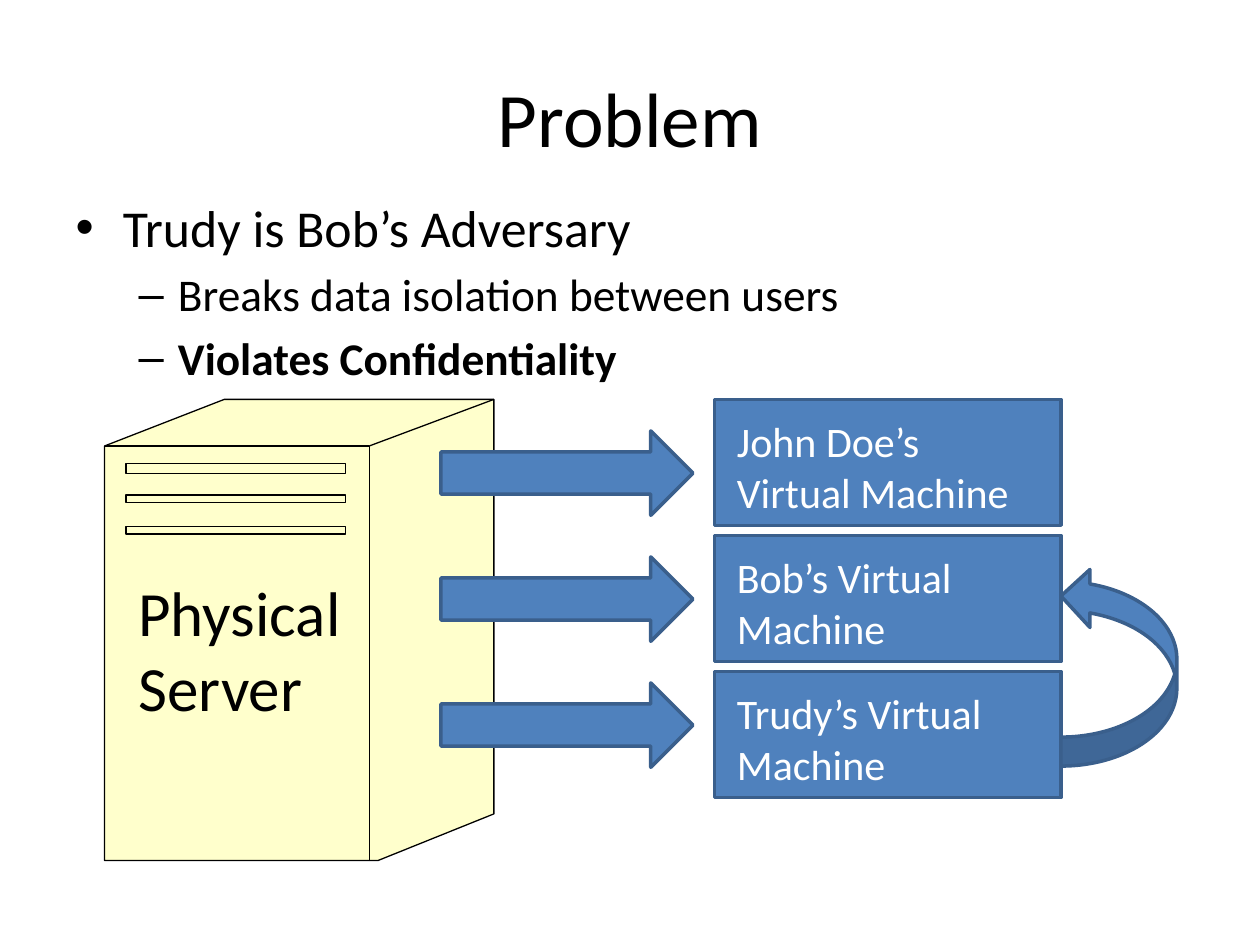
import pptx
import pptx.dml.color
import pptx.enum.shapes
import pptx.enum.text
import pptx.oxml.ns
import pptx.util
from lxml import etree
from pptx.util import Inches

FONT = "Calibri"
BLACK, WHITE = "000000", "FFFFFF"
BLUE, DARK_BLUE, CREAM = "4F81BD", "3A5F8C", "FFFFCC"
SHAPES = pptx.enum.shapes.MSO_SHAPE


def color(hex_string):
    return pptx.dml.color.RGBColor.from_string(hex_string)


def add_text(para, text, size, font_color=BLACK, bold=False):
    span = para.add_run()
    span.text = text
    span.font.name = FONT
    span.font.size = pptx.util.Pt(size)
    span.font.bold = bold
    span.font.color.rgb = color(font_color)


def place(shape, left, top, width, height):
    shape.left, shape.top = Inches(left), Inches(top)
    shape.width, shape.height = Inches(width), Inches(height)


def style(shape, fill, line, line_width):
    shape.shadow.inherit = False
    shape.fill.solid()
    shape.fill.fore_color.rgb = color(fill)
    shape.line.color.rgb = color(line)
    shape.line.width = pptx.util.Pt(line_width)


def add_block(slide, kind, left, top, width, height, fill=BLUE, line=DARK_BLUE, line_width=2):
    block = slide.shapes.add_shape(
        kind, Inches(left), Inches(top), Inches(width), Inches(height))
    style(block, fill, line, line_width)
    return block


def add_label(slide, text, left, top, width, height, size, font_color):
    box = slide.shapes.add_textbox(
        Inches(left), Inches(top), Inches(width), Inches(height))
    box.text_frame.word_wrap = True
    box.text_frame.auto_size = pptx.enum.text.MSO_AUTO_SIZE.SHAPE_TO_FIT_TEXT
    add_text(box.text_frame.paragraphs[0], text, size, font_color)


def add_outline(slide, points, fill, line, line_width):
    """Draw a closed polygon through points given in inches."""
    start, *others = [(Inches(x), Inches(y)) for x, y in points]
    builder = slide.shapes.build_freeform(*start)
    builder.add_line_segments(others, close=True)
    style(builder.convert_to_shape(), fill, line, line_width)


def add_edge(slide, start, end):
    edge = slide.shapes.add_connector(
        pptx.enum.shapes.MSO_CONNECTOR.STRAIGHT,
        Inches(start[0]), Inches(start[1]), Inches(end[0]), Inches(end[1]))
    edge.line.color.rgb = color(BLACK)
    edge.line.width = pptx.util.Pt(0.75)
    etree.SubElement(edge._element.spPr, pptx.oxml.ns.qn("a:effectLst"))


def fill_placeholders(slide):
    title, body = slide.placeholders[0], slide.placeholders[1]
    place(title, 0.5, 0.3, 9, 1.25)
    title.text_frame.vertical_anchor = pptx.enum.text.MSO_ANCHOR.MIDDLE
    add_text(title.text_frame.paragraphs[0], "Problem", 44)

    place(body, 0.5, 1.5, 9.17, 1.42)
    frame = body.text_frame
    frame.auto_size = pptx.enum.text.MSO_AUTO_SIZE.NONE
    add_text(frame.paragraphs[0], "Trudy is Bob’s Adversary", 29.6)
    for text, bold in (("Breaks data isolation between users", False),
                       ("Violates Confidentiality", True)):
        para = frame.add_paragraph()
        para.level = 1
        add_text(para, text, 25.9, bold=bold)


def add_server(slide):
    """Draw the tower: outline, front-face edges and three drive slots."""
    left, corner, right = 0.83, 2.93, 3.92
    top, front_top, bottom = 3.17, 3.54, 6.83
    outline = [(left, front_top), (1.78, top), (right, top),
               (right, 6.46), (3, bottom), (left, bottom)]
    add_outline(slide, outline, CREAM, BLACK, 0.75)

    for end in ((left, front_top), (right, top), (corner, bottom)):
        add_edge(slide, (corner, front_top), end)
    for row, height in enumerate((0.08, 0.06, 0.06)):
        add_block(slide, SHAPES.RECTANGLE, 1, 3.68 + 0.25 * row, 1.74, height,
                  CREAM, BLACK, 0.75)


def add_machines(slide):
    owners = ("John Doe’s", "Bob’s", "Trudy’s")
    for row, owner in enumerate(owners):
        top = 3.17 + 1.08 * row
        add_block(slide, SHAPES.RIGHT_ARROW, 3.5, 3.42 + row, 2, 0.67)
        add_block(slide, SHAPES.RECTANGLE, 5.67, top, 2.75, 1)
        add_label(slide, f"{owner} Virtual Machine", 5.75, top + 0.08, 2.58, 0.91, 24, WHITE)


def main():
    deck = pptx.Presentation()
    deck.slide_width, deck.slide_height = Inches(10), Inches(7.5)
    slide = deck.slides.add_slide(deck.slide_layouts[1])
    fill_placeholders(slide)
    add_server(slide)
    add_machines(slide)
    add_label(slide, "Physical Server", 1, 4.5, 1.92, 1.31, 36, BLACK)
    attack = add_block(slide, SHAPES.CURVED_RIGHT_ARROW, 8.42, 4.5, 0.92, 1.58)
    attack.rotation = 180
    deck.save("out.pptx")


if __name__ == "__main__":
    main()
